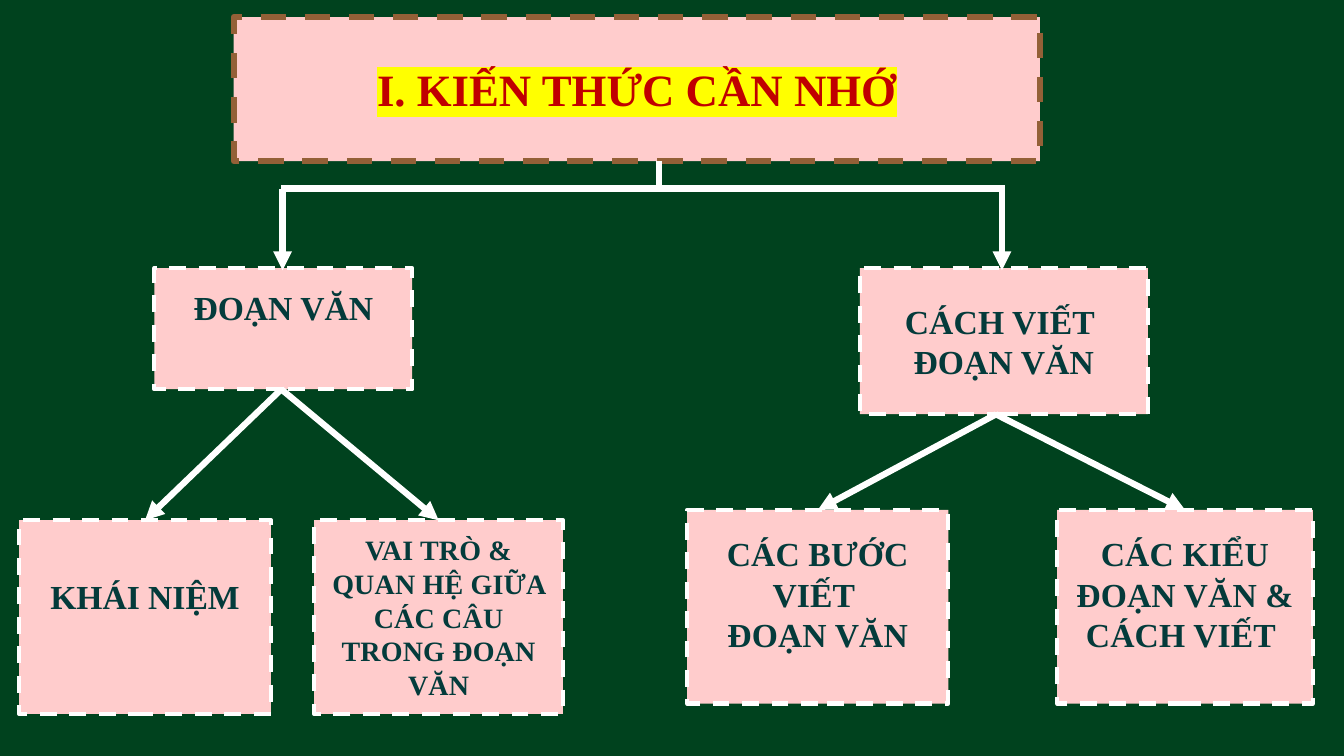
from dataclasses import dataclass

from lxml import etree
from pptx import Presentation
from pptx import util as u
from pptx.dml.color import RGBColor
from pptx.enum import dml, shapes, text
from pptx.oxml.ns import qn

GREEN, PINK, WHITE, BROWN = "00421E", "FFCCCC", "FFFFFF", "936037"
TEAL, RED, YELLOW = "043B3B", "C00000", "FFFF00"
BAR_Y = 4.75
ARROW_TIP_Y = 6.81


@dataclass
class Box:
    """A dashed box; lengths in cm, lift is extra inset below the text."""
    left: float
    top: float
    width: float
    height: float
    lines: tuple[str, ...]
    size: int = 24
    lift: float = 0
    spacing: int = 0
    ink: str = TEAL
    border: str = WHITE
    border_width: float = 3
    highlight: str = ""

    @property
    def center(self) -> float:
        return self.left + self.width / 2

    @property
    def bottom(self) -> float:
        return self.top + self.height


@dataclass
class Branch:
    topic: Box
    drop_x: float
    fork_x: float
    subtopics: tuple[Box, ...]


heading = Box(5.89, 0.43, 20.32, 3.63, ("I. KIẾN THỨC CẦN NHỚ",), size=32,
              ink=RED, border=BROWN, border_width=4.5, highlight=YELLOW)
branches = (
    Branch(
        Box(3.89, 6.76, 6.5, 3.05, ("ĐOẠN VĂN",), lift=1.08), 7.12, 7.09,
        (Box(0.48, 13.11, 6.35, 4.88, ("KHÁI NIỆM",), lift=1.08),
         Box(7.92, 13.11, 6.27, 4.88,
             ("VAI TRÒ & QUAN HỆ GIỮA CÁC CÂU TRONG ĐOẠN VĂN",),
             size=20, spacing=10))),
    Branch(
        Box(21.67, 6.76, 7.26, 3.68, ("CÁCH VIẾT ", "ĐOẠN VĂN"), spacing=10),
        25.25, 25.1,
        (Box(17.32, 12.85, 6.58, 4.88, ("CÁC BƯỚC VIẾT ", "ĐOẠN VĂN"),
             lift=0.65, spacing=10),
         Box(26.64, 12.85, 6.45, 4.88, ("CÁC KIỂU ĐOẠN VĂN &", "CÁCH VIẾT "),
             lift=0.65, spacing=10))),
)


def color(value: str) -> RGBColor:
    return RGBColor.from_string(value)


def draw_box(slide, box: Box) -> None:
    rect = slide.shapes.add_shape(
        shapes.MSO_SHAPE.RECTANGLE, u.Cm(box.left), u.Cm(box.top),
        u.Cm(box.width), u.Cm(box.height))
    rect.shadow.inherit = False
    rect.fill.solid()
    rect.fill.fore_color.rgb = color(PINK)
    rect.line.color.rgb = color(box.border)
    rect.line.width = u.Pt(box.border_width)
    rect.line.dash_style = dml.MSO_LINE.DASH
    frame = rect.text_frame
    frame.word_wrap = True
    frame.vertical_anchor = text.MSO_ANCHOR.MIDDLE
    frame.margin_bottom = u.Cm(0.13 + box.lift)
    font_format = {"name": "Times New Roman", "size": u.Pt(box.size), "bold": True}
    for index, line in enumerate(box.lines):
        paragraph = frame.add_paragraph() if index else frame.paragraphs[0]
        paragraph.alignment = text.PP_ALIGN.CENTER
        run = paragraph.add_run()
        run.text = line
        for name, value in font_format.items():
            setattr(run.font, name, value)
        run.font.color.rgb = color(box.ink)
        properties = run.font._element
        if box.spacing:
            properties.set("spc", str(box.spacing))
        if box.highlight:
            marker = etree.Element(qn("a:highlight"))
            etree.SubElement(marker, qn("a:srgbClr"), val=box.highlight)
            properties.find(qn("a:solidFill")).addnext(marker)


def draw_line(slide, x1: float, y1: float, x2: float, y2: float,
              arrow: bool = True) -> None:
    link = slide.shapes.add_connector(
        shapes.MSO_CONNECTOR.STRAIGHT, u.Cm(x1), u.Cm(y1), u.Cm(x2), u.Cm(y2))
    link.line.color.rgb = color(WHITE)
    link.line.width = u.Pt(4.5)
    if arrow:
        etree.SubElement(link.line._get_or_add_ln(), qn("a:tailEnd"), type="triangle")
    etree.SubElement(link._element.spPr, qn("a:effectLst"))


def main() -> None:
    deck = Presentation()
    deck.slide_width, deck.slide_height = u.Cm(33.87), u.Cm(19.05)
    slide = deck.slides.add_slide(deck.slide_layouts[6])
    slide.background.fill.solid()
    slide.background.fill.fore_color.rgb = color(GREEN)

    draw_box(slide, heading)
    draw_line(slide, 16.61, heading.bottom, 16.61, BAR_Y, arrow=False)
    draw_line(slide, 7.09, BAR_Y, 25.32, BAR_Y, arrow=False)
    for branch in branches:
        draw_box(slide, branch.topic)
        draw_line(slide, branch.drop_x, BAR_Y, branch.drop_x, ARROW_TIP_Y)
        for subtopic in branch.subtopics:
            draw_box(slide, subtopic)
            draw_line(slide, branch.fork_x, branch.topic.bottom,
                      subtopic.center, subtopic.top)
    deck.save("out.pptx")


if __name__ == "__main__":
    main()
